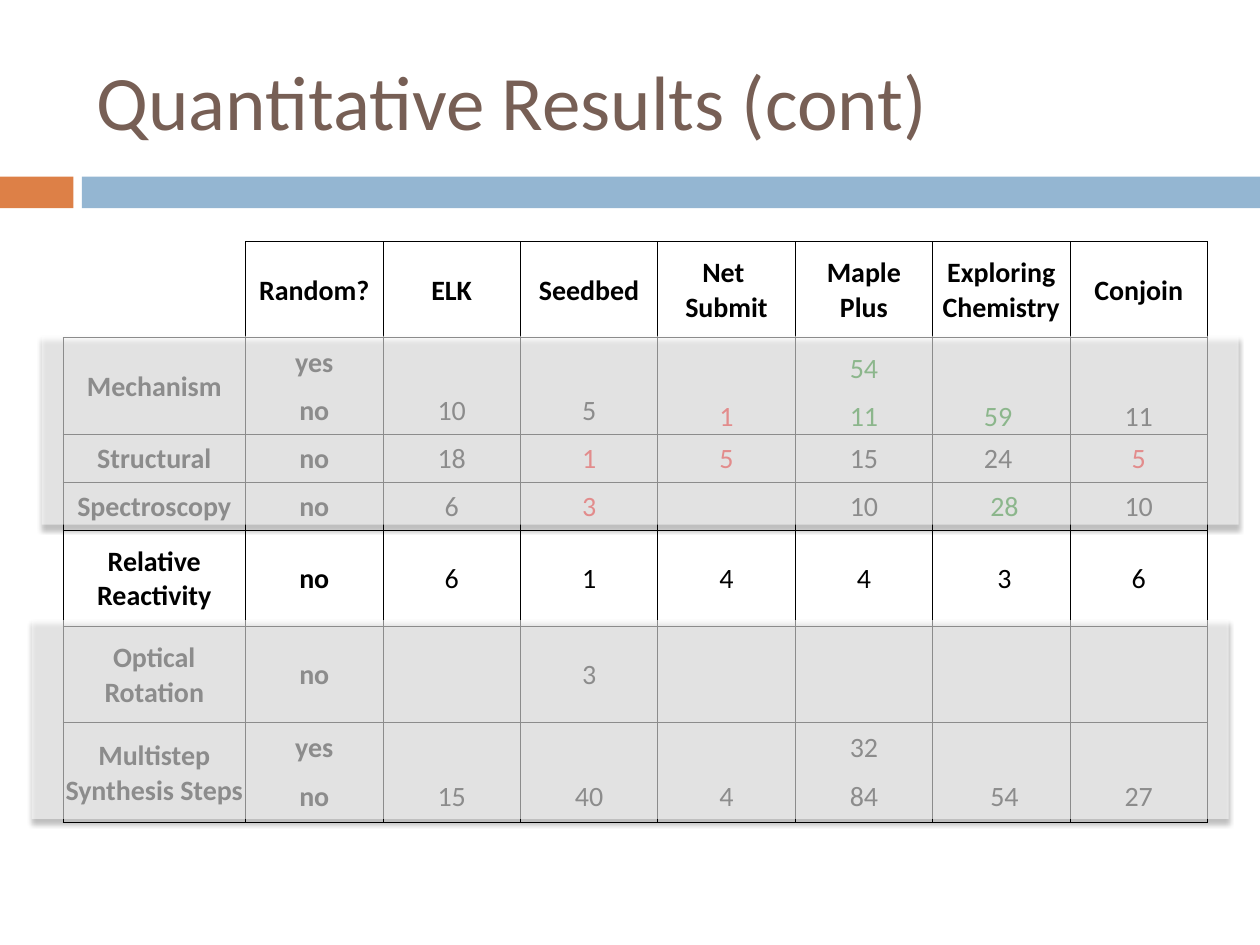
from dataclasses import dataclass
from typing import NamedTuple

import pptx
import pptx.dml.color
import pptx.enum.shapes
import pptx.enum.text
import pptx.oxml
import pptx.oxml.ns
import pptx.util

Cm = pptx.util.Cm
Pt = pptx.util.Pt
Anchor = pptx.enum.text.MSO_ANCHOR
Align = pptx.enum.text.PP_ALIGN


@dataclass(frozen=True)
class Theme:
    font: str = "Calibri"
    title_size: int = 44
    table_size: int = 16
    title: str = "775F55"
    accent: str = "DD8047"
    band: str = "94B6D2"
    text: str = "000000"
    high: str = "008000"
    low: str = "FF0000"
    veil: str = "FFFFFF"
    border_width: float = 0.5


THEME = Theme()


class Box(NamedTuple):
    """Position and size in centimetres."""
    left: float
    top: float
    width: float
    height: float

    def lengths(self) -> list:
        return [Cm(value) for value in self]


class Score(NamedTuple):
    text: str
    color: str = THEME.text


def high(text: str) -> Score:
    return Score(text, THEME.high)


def low(text: str) -> Score:
    return Score(text, THEME.low)


@dataclass(frozen=True)
class ResultRow:
    label: str
    random: str
    scores: tuple
    height: float = 0.97
    open_sides: str = ""     # sides drawn without a border
    bottom_from: int = 99    # first column whose text sits at the bottom


HEADINGS = ("Random?", "ELK", "Seedbed", "Net \nSubmit", "Maple\nPlus",
            "Exploring Chemistry", "Conjoin")
TALL = 1.94
RESULTS = (
    ResultRow("Mechanism", "yes", ("", "", "", high("54"), "", ""),
              open_sides="B", bottom_from=4),
    ResultRow("", "no", ("10", "5", low("1"), high("11"), high("59 "), "11"),
              open_sides="T", bottom_from=4),
    ResultRow("Structural", "no", ("18", low("1"), low("5"), "15", "24 ", low("5"))),
    ResultRow("Spectroscopy", "no", ("6", low("3"), "", "10", high(" 28"), "10")),
    ResultRow("Relative Reactivity", "no", ("6", "1", "4", "4", " 3", "6"), TALL),
    ResultRow("Optical Rotation", "no", ("", "3", "", "", "", ""), TALL),
    ResultRow("Multistep Synthesis Steps", "yes", ("", "", "", "32", "", ""),
              open_sides="B"),
    ResultRow("", "no", ("15", "40", "4", "84", " 54", "27"), 1.04, "T"),
)
LABEL_WIDTH, SCORE_WIDTH = 3.68, 2.77
TABLE_BOX = Box(1.27, 4.87, LABEL_WIDTH + SCORE_WIDTH * len(HEADINGS),
                TALL + sum(row.height for row in RESULTS))
TITLE_BOX = Box(1.69, 0.64, 22.65, 2.75)
BANDS = ((Box(0, 3.56, 1.48, 0.64), THEME.accent),
         (Box(1.65, 3.56, 23.75, 0.64), THEME.band))
VEILS = (Box(0.64, 12.5, 24.13, 4.01), Box(0.84, 6.77, 24.13, 3.81))


def rgb(color: str) -> pptx.dml.color.RGBColor:
    return pptx.dml.color.RGBColor.from_string(color)


def style_paragraph(paragraph, size: int, color: str, bold: bool, align) -> None:
    paragraph.alignment = align
    paragraph.font.name = THEME.font
    paragraph.font.size = Pt(size)
    paragraph.font.bold = bold
    paragraph.font.color.rgb = rgb(color)


def add_rectangle(slide, box: Box, color: str):
    shape = slide.shapes.add_shape(
        pptx.enum.shapes.MSO_SHAPE.RECTANGLE, *box.lengths())
    shape.shadow.inherit = False
    shape.fill.solid()
    shape.fill.fore_color.rgb = rgb(color)
    shape.line.fill.background()
    return shape


def add_veil(slide, box: Box) -> None:
    """Translucent cover with a soft shadow below it."""
    shape = add_rectangle(slide, box, THEME.veil)
    namespace = pptx.oxml.ns.nsdecls("a")
    properties = shape.fill._xPr
    color = properties.find(".//" + pptx.oxml.ns.qn("a:srgbClr"))
    color.append(pptx.oxml.parse_xml(f'<a:alpha {namespace} val="55000"/>'))
    effects = properties.find(pptx.oxml.ns.qn("a:effectLst"))
    effects.append(pptx.oxml.parse_xml(
        f'<a:outerShdw {namespace} blurRad="{Pt(3)}" dist="{Pt(2.4)}" dir="5400000" '
        'rotWithShape="0"><a:srgbClr val="000000"><a:alpha val="45000"/>'
        '</a:srgbClr></a:outerShdw>'))


def set_borders(cell, open_sides: str) -> None:
    properties = cell._tc.get_or_add_tcPr()
    for index, side in enumerate("LRTB"):
        paint = ("<a:noFill/>" if side in open_sides else
                 f'<a:solidFill><a:srgbClr val="{THEME.text}"/></a:solidFill>')
        properties.insert(index, pptx.oxml.parse_xml(
            f'<a:ln{side} {pptx.oxml.ns.nsdecls("a")} '
            f'w="{Pt(THEME.border_width)}">{paint}</a:ln{side}>'))


def fill_cell(cell, content, bold: bool, open_sides: str = "",
              anchor=Anchor.MIDDLE) -> None:
    score = content if isinstance(content, Score) else Score(content)
    cell.fill.background()
    cell.margin_left = cell.margin_right = cell.margin_top = Cm(0.03)
    cell.margin_bottom = 0
    cell.vertical_anchor = anchor
    cell.text_frame.text = score.text
    for paragraph in cell.text_frame.paragraphs:
        style_paragraph(paragraph, THEME.table_size, score.color, bold, Align.CENTER)
    set_borders(cell, open_sides)


def add_results_table(slide) -> None:
    table = slide.shapes.add_table(
        len(RESULTS) + 1, len(HEADINGS) + 1, *TABLE_BOX.lengths()).table
    table.first_row = table.horz_banding = False
    for index, column in enumerate(table.columns):
        column.width = Cm(SCORE_WIDTH if index else LABEL_WIDTH)

    # Heading row, with an open corner
    table.rows[0].height = Cm(TALL)
    fill_cell(table.cell(0, 0), "", True, "LT")
    for column, heading in enumerate(HEADINGS, 1):
        fill_cell(table.cell(0, column), heading, True)

    # Result rows; a row without a label shares the one above
    for row, result in enumerate(RESULTS, 1):
        table.rows[row].height = Cm(result.height)
        fill_cell(table.cell(row, 0), result.label, True)
        for column, content in enumerate((result.random, *result.scores), 1):
            anchor = Anchor.BOTTOM if column >= result.bottom_from else Anchor.MIDDLE
            fill_cell(table.cell(row, column), content, column == 1,
                      result.open_sides, anchor)
        if not result.label:
            table.cell(row - 1, 0).merge(table.cell(row, 0))


def add_title(slide, text: str) -> None:
    title = slide.shapes.title
    title.left, title.top, title.width, title.height = TITLE_BOX.lengths()
    title.text_frame.text = text
    title.text_frame.vertical_anchor = Anchor.MIDDLE
    style_paragraph(title.text_frame.paragraphs[0], THEME.title_size,
                    THEME.title, False, Align.LEFT)


def main() -> None:
    presentation = pptx.Presentation()
    presentation.slide_width, presentation.slide_height = Cm(25.4), Cm(19.05)
    slide = presentation.slides.add_slide(presentation.slide_layouts[5])

    # Title and the bands below it
    for box, color in BANDS:
        add_rectangle(slide, box, color)
    add_title(slide, "Quantitative Results (cont)")

    # Table, dimmed except for the row in focus
    add_results_table(slide)
    for box in VEILS:
        add_veil(slide, box)

    presentation.save("out.pptx")


if __name__ == "__main__":
    main()
